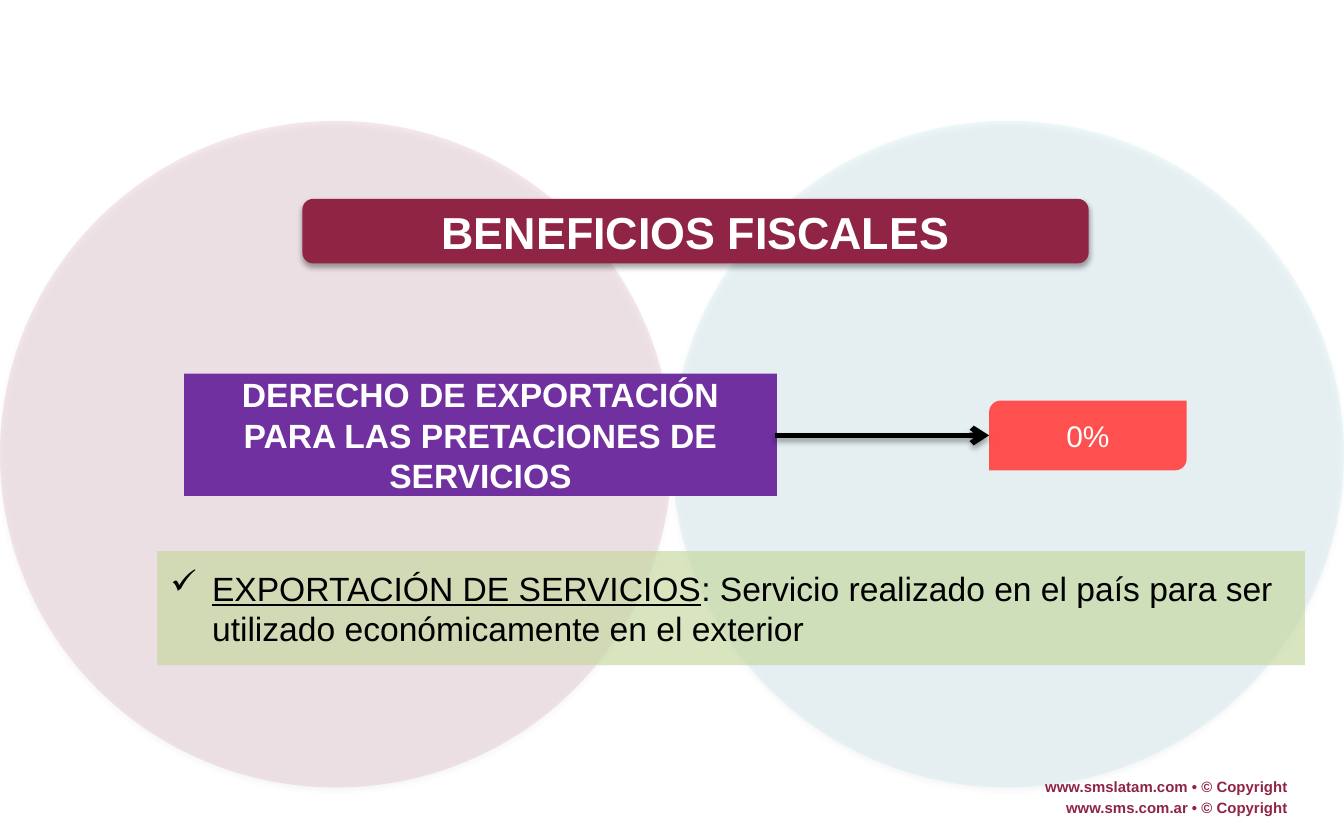
"""Build the slide on tax benefits for service exports."""
import dataclasses

import lxml.etree
import pptx
import pptx.dml.color
import pptx.enum.shapes
import pptx.enum.text
import pptx.oxml.ns
import pptx.util

Inches = pptx.util.Inches
Pt = pptx.util.Pt
qn = pptx.oxml.ns.qn
Form = pptx.enum.shapes.MSO_SHAPE
Align = pptx.enum.text.PP_ALIGN
Anchor = pptx.enum.text.MSO_ANCHOR


@dataclasses.dataclass(frozen=True)
class Theme:
    font: str = "Arial"
    wine: str = "902444"
    rose: str = "A4244A"
    aqua: str = "61C1D1"
    plum: str = "7030A0"
    red: str = "FF5050"
    green: str = "C3D69B"
    white: str = "FFFFFF"
    black: str = "000000"
    title: int = 24
    body: int = 18
    rate: int = 16
    foot: int = 8


def add(parent, tag, **attrs):
    return lxml.etree.SubElement(parent, qn(tag), **attrs)


def paint(color, value):
    color.rgb = pptx.dml.color.RGBColor.from_string(value)


class Page:
    def __init__(self, slide, theme):
        self.slide = slide
        self.theme = theme

    def shade(self, shape, alpha, drop):
        effect = shape._element.spPr.find(qn("a:effectLst"))
        if effect is None:
            effect = add(shape._element.spPr, "a:effectLst")
        outer = add(effect, "a:outerShdw", blurRad=str(Pt(3.1)), dist=str(Pt(drop)),
                    dir="5400000", rotWithShape="0")
        tint = add(outer, "a:srgbClr", val=self.theme.black)
        add(tint, "a:alpha", val=str(alpha * 1000))

    def shape(self, form, box, fill, alpha=100):
        shape = self.slide.shapes.add_shape(form, *map(Inches, box))
        shape.fill.solid()
        paint(shape.fill.fore_color, fill)
        if alpha < 100:
            tint = shape._element.spPr.find(qn("a:solidFill"))[0]
            add(tint, "a:alpha", val=str(alpha * 1000))
        shape.line.fill.background()
        shape.shadow.inherit = False
        return shape

    def style(self, run, size, color, bold=False, under=False):
        run.font.name = self.theme.font
        run.font.size = Pt(size)
        run.font.bold = bold
        run.font.underline = under
        paint(run.font.color, color)

    def label(self, shape, text, size, color, bold=True, align=Align.CENTER):
        frame = shape.text_frame
        frame.word_wrap = True
        frame.text = text
        para = frame.paragraphs[0]
        para.alignment = align
        self.style(para.runs[0], size, color, bold)

    def check(self, shape, term, text):
        frame = shape.text_frame
        frame.word_wrap = True
        para = frame.paragraphs[0]
        para.alignment = Align.LEFT
        props = para._p.get_or_add_pPr()
        props.set("marL", str(Inches(0.31)))
        props.set("indent", str(-Inches(0.31)))
        add(props, "a:buChar", char="✓")
        for part, under in ((term, True), (text, False)):
            run = para.add_run()
            run.text = part
            self.style(run, self.theme.body, self.theme.black, under=under)

    def foot(self, top, text):
        box = self.slide.shapes.add_textbox(*map(Inches, (7.54, top, 2.14, 0.24)))
        self.label(box, text, self.theme.foot, self.theme.wine, align=Align.RIGHT)

    def arrow(self, left, right, y):
        line = self.slide.shapes.add_connector(
            pptx.enum.shapes.MSO_CONNECTOR.STRAIGHT, *map(Inches, (left, y, right, y)))
        paint(line.line.color, self.theme.black)
        line.line.width = Pt(3)
        add(line.line._get_or_add_ln(), "a:tailEnd", type="arrow")
        self.shade(line, 35, 1.8)


def main():
    deck = pptx.Presentation()
    deck.slide_width, deck.slide_height = Inches(10), Inches(6.25)
    theme = Theme()
    page = Page(deck.slides.add_slide(deck.slide_layouts[6]), theme)

    for top, site in ((5.74, "www.smslatam.com"), (5.89, "www.sms.com.ar")):
        page.foot(top, f"{site} • © Copyright")
    for left, fill in ((0, theme.rose), (5, theme.aqua)):
        disc = page.shape(Form.OVAL, (left, 0.9, 5, 4.96), fill, 10)
        page.shade(disc, 38, 1.6)

    title = page.shape(Form.ROUNDED_RECTANGLE, (2.25, 1.48, 5.85, 0.48), theme.wine)
    page.shade(title, 35, 1.8)
    page.label(title, "BENEFICIOS FISCALES", theme.title, theme.white)

    duty = page.shape(Form.RECTANGLE, (1.37, 2.78, 4.41, 0.91), theme.plum)
    page.label(duty, "DERECHO DE EXPORTACIÓN PARA LAS PRETACIONES DE SERVICIOS",
               theme.body, theme.white)
    rate = page.shape(Form.ROUND_2_DIAG_RECTANGLE, (7.36, 2.98, 1.47, 0.52), theme.red)
    page.label(rate, "0%", theme.rate, theme.white, bold=False)
    page.arrow(5.77, 7.36, 3.24)

    note = page.shape(Form.RECTANGLE, (1.17, 4.1, 8.54, 0.85), theme.green, 63)
    page.check(note, "EXPORTACIÓN DE SERVICIOS",
               ": Servicio realizado en el país para ser utilizado "
               "económicamente en el exterior")
    for shape in (title, duty, rate, note):
        shape.text_frame.vertical_anchor = Anchor.MIDDLE
    deck.save("out.pptx")


if __name__ == "__main__":
    main()
